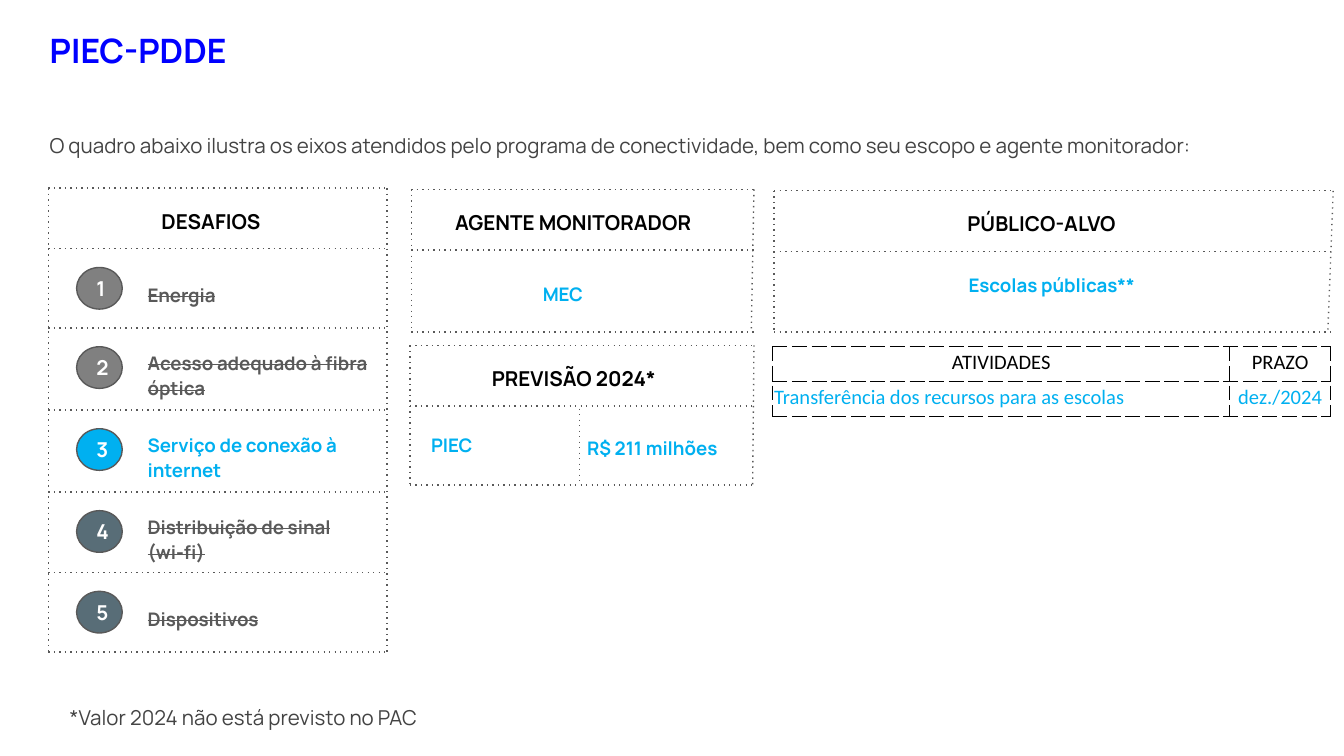
"""Build the PIEC-PDDE slide with its dotted panels and activity table."""
from dataclasses import dataclass

from lxml.etree import SubElement
from pptx import Presentation
from pptx.dml.color import RGBColor
from pptx.enum.lang import MSO_LANGUAGE_ID as Language
from pptx.enum.shapes import MSO_CONNECTOR as Connector, MSO_SHAPE as Preset
from pptx.enum.text import MSO_ANCHOR as Anchor, MSO_AUTO_SIZE as AutoSize, PP_ALIGN as Align
from pptx.oxml.ns import qn
from pptx.util import Inches, Pt

GRAY, CYAN, SLATE, MID_GRAY = "595959", "00B0F0", "586D77", "808080"
BLACK, WHITE, BLUE, BODY_GRAY = "000000", "FFFFFF", "0000FF", "434343"


@dataclass(frozen=True)
class Style:
    size: float
    color: str
    bold: bool = False
    align: Align = Align.LEFT
    spacing: float = 1.0
    strike: bool = False
    font: str = "Manrope"


@dataclass(frozen=True)
class Panel:
    heading: str
    left: float
    top: float
    right: float
    bottom: float
    skew: float = 0

    @property
    def divider(self) -> float:
        """Return the height of the line under the heading."""
        return self.top + 0.45


@dataclass(frozen=True)
class Challenge:
    label: str
    top: float
    badge: str
    lines: int = 1
    active: bool = False
    width: float = 1.86


@dataclass(frozen=True)
class Note:
    text: str
    left: float
    top: float
    width: float
    height: float
    style: Style


HEADING = Style(11, BLACK, True, Align.CENTER)
PROSE = Style(11, BODY_GRAY, spacing=1.15)
VALUE = Style(10, CYAN, True, spacing=1.15)
CENTERED_VALUE = Style(10, CYAN, True, Align.CENTER, 1.15)
STRUCK = Style(10, GRAY, True, spacing=1.15, strike=True)
BADGE = Style(11, WHITE, True, Align.CENTER)
TABLE_HEAD = Style(11, BLACK, align=Align.CENTER, font="Calibri")
ACTIVITY = Style(11, CYAN, font="Calibri")
DEADLINE = Style(11, CYAN, align=Align.CENTER, font="Calibri")

CHALLENGE_PANEL = Panel("DESAFIOS", 0.36, 1.4, 2.88, 4.85)
PANELS = [
    CHALLENGE_PANEL,
    Panel("PÚBLICO-ALVO", 5.76, 1.42, 9.92, 2.47, 0.04),
    Panel("AGENTE MONITORADOR", 3.06, 1.41, 5.61, 2.47, 0.02),
    Panel("PREVISÃO 2024*", 3.05, 2.57, 5.61, 3.61, 0.01),
]
CHALLENGES = [
    Challenge("Energia", 1.99, MID_GRAY),
    Challenge("Acesso adequado à fibra óptica", 2.58, MID_GRAY, lines=2),
    Challenge("Serviço de conexão à internet", 3.19, CYAN, lines=2, active=True),
    Challenge("Distribuição de sinal (wi-fi)", 3.8, SLATE, lines=2, width=1.8),
    Challenge("Dispositivos", 4.4, SLATE),
]
NOTES = [
    Note("O quadro abaixo ilustra os eixos atendidos pelo programa de conectividade, "
         "bem como seu escopo e agente monitorador:", 0.27, 0.86, 9.29, 0.41, PROSE),
    Note("Escolas públicas**", 5.86, 1.92, 3.93, 0.4, CENTERED_VALUE),
    Note("MEC", 3.94, 1.98, 0.68, 0.4, VALUE),
    Note("PIEC", 3.11, 3.11, 1.17, 0.4, VALUE),
    Note("R$ 211 milhões", 4.27, 3.13, 1.56, 0.4, VALUE),
    Note("*Valor 2024 não está previsto no PAC", 0.42, 5.12, 5.68, 0.41, PROSE),
]
ACTIVITIES = [
    [("ATIVIDADES", TABLE_HEAD), ("PRAZO", TABLE_HEAD)],
    [("Transferência dos recursos para as escolas", ACTIVITY), ("dez./2024", DEADLINE)],
]


def rgb(code: str) -> RGBColor:
    """Turn a hex string into a colour."""
    return RGBColor.from_string(code)


def apply(target, values: dict) -> None:
    """Set each named attribute on the target."""
    for name, value in values.items():
        setattr(target, name, value)


def write(frame, text: str, style: Style) -> None:
    """Write one styled paragraph into a text frame."""
    paragraph = frame.paragraphs[0]
    apply(paragraph, {"alignment": style.align, "line_spacing": style.spacing})
    run = paragraph.add_run()
    run.text = text
    apply(run.font, {"name": style.font, "size": Pt(style.size), "bold": style.bold,
                     "language_id": Language.BRAZILIAN_PORTUGUESE})
    run.font.color.rgb = rgb(style.color)
    if style.strike:
        run.font._element.set("strike", "sngStrike")


def pad(frame, anchor: Anchor = Anchor.TOP, fit: AutoSize = AutoSize.SHAPE_TO_FIT_TEXT) -> None:
    """Give a text frame even margins, wrapping and an anchor."""
    sides = ("left", "top", "right", "bottom")
    margins = {f"margin_{side}": Inches(0.1) for side in sides}
    apply(frame, {"word_wrap": True, "auto_size": fit, "vertical_anchor": anchor, **margins})


def add_note(slide, note: Note) -> None:
    """Add a text box."""
    box = slide.shapes.add_textbox(*map(Inches, (note.left, note.top, note.width, note.height)))
    pad(box.text_frame)
    write(box.text_frame, note.text, note.style)


def add_dots(slide, x1: float, y1: float, x2: float, y2: float) -> None:
    """Add a dotted line."""
    rule = slide.shapes.add_connector(Connector.STRAIGHT, *map(Inches, (x1, y1, x2, y2)))
    rule.line.width = Pt(0.75)
    rule.line.color.rgb = rgb(GRAY)
    SubElement(rule.line._get_or_add_ln(), qn("a:prstDash"), val="dot")
    SubElement(rule._element.spPr, qn("a:effectLst"))


def add_panel(slide, panel: Panel) -> None:
    """Add a dotted frame with its heading and divider."""
    for y in (panel.top, panel.divider, panel.bottom):
        add_dots(slide, panel.left, y, panel.right, y)
    add_dots(slide, panel.left, panel.top, panel.left, panel.bottom)
    add_dots(slide, panel.right, panel.top, panel.right - panel.skew, panel.bottom)
    left = panel.left - 0.25 - panel.skew
    width = panel.right - panel.left + 0.4
    add_note(slide, Note(panel.heading, left, panel.top + 0.06, width, 0.39, HEADING))


def add_challenge(slide, number: int, challenge: Challenge) -> None:
    """Add a numbered badge with its label and the line above it."""
    if number > 1:
        y = challenge.top - 0.14
        add_dots(slide, CHALLENGE_PANEL.left, y, CHALLENGE_PANEL.right, y)
    badge = slide.shapes.add_shape(Preset.OVAL, *map(Inches, (0.57, challenge.top, 0.34, 0.31)))
    badge.shadow.inherit = False
    badge.fill.solid()
    badge.fill.fore_color.rgb = rgb(challenge.badge)
    badge.line.color.rgb = rgb(GRAY)
    badge.line.width = Pt(0.75)
    pad(badge.text_frame, Anchor.MIDDLE, AutoSize.NONE)
    write(badge.text_frame, str(number), BADGE)
    label_top = challenge.top - 0.09 * (challenge.lines - 1)
    style = VALUE if challenge.active else STRUCK
    height = 0.21 + 0.19 * challenge.lines
    add_note(slide, Note(challenge.label, 1, label_top, challenge.width, height, style))


def add_activities(slide) -> None:
    """Add the activity table with dashed borders."""
    table = slide.shapes.add_table(2, 2, *map(Inches, (5.75, 2.58, 4.15, 0.52))).table
    apply(table, {"first_row": False, "horz_banding": False})
    for column, width in zip(table.columns, (3.4, 0.75)):
        column.width = Inches(width)
    thin = Inches(0.01)
    for row, entries in zip(table.rows, ACTIVITIES):
        row.height = Inches(0.26)
        for cell, (text, style) in zip(row.cells, entries):
            apply(cell, {"margin_left": thin, "margin_top": thin, "margin_right": thin,
                         "margin_bottom": Inches(0.05), "vertical_anchor": Anchor.BOTTOM})
            write(cell.text_frame, text, style)
            for side in ("lnL", "lnR", "lnT", "lnB"):
                border = SubElement(cell._tc.get_or_add_tcPr(), qn(f"a:{side}"), w=str(Pt(0.5)))
                SubElement(SubElement(border, qn("a:solidFill")), qn("a:srgbClr"), val=BLACK)
                SubElement(border, qn("a:prstDash"), val="dash")
            cell.fill.background()


def main() -> None:
    """Build and save the slide."""
    deck = Presentation()
    apply(deck, {"slide_width": Inches(10), "slide_height": Inches(10) * 9 // 16})
    slide = deck.slides.add_slide(deck.slide_layouts[5])
    title = slide.shapes.title
    apply(title, {"left": Inches(0.27), "top": Inches(0.12),
                  "width": Inches(7.52), "height": Inches(0.5)})
    pad(title.text_frame)
    write(title.text_frame, "PIEC-PDDE", Style(18, BLUE, True))
    for panel in PANELS:
        add_panel(slide, panel)
    for number, challenge in enumerate(CHALLENGES, 1):
        add_challenge(slide, number, challenge)
    add_dots(slide, 4.31, 3.04, 4.31, 3.58)
    add_activities(slide)
    for note in NOTES:
        add_note(slide, note)
    deck.save("out.pptx")


if __name__ == "__main__":
    main()
